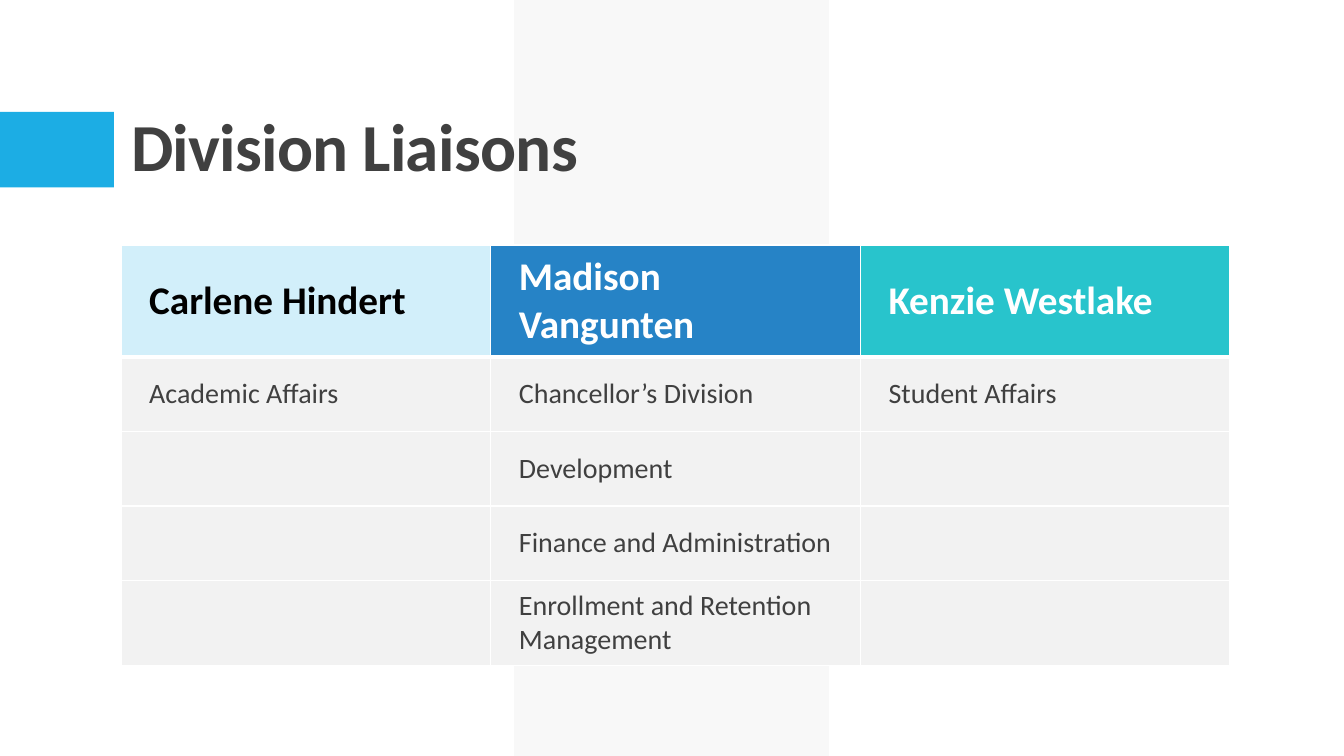
from lxml import etree
from pptx import Presentation
from pptx.dml.color import RGBColor
from pptx.enum.shapes import MSO_SHAPE
from pptx.enum.text import MSO_ANCHOR, MSO_AUTO_SIZE, PP_ALIGN
from pptx.oxml.ns import qn
from pptx.util import Inches, Pt

RECT, SLANT = MSO_SHAPE.RECTANGLE, MSO_SHAPE.PARALLELOGRAM
MIDDLE, BOTTOM = MSO_ANCHOR.MIDDLE, MSO_ANCHOR.BOTTOM
LEFT, FIXED = PP_ALIGN.LEFT, MSO_AUTO_SIZE.NONE

COLORS = {"white": "FFFFFF", "black": "000000", "gray": "F2F2F2", "text": "404040",
          "accent": "1CADE4", "pale": "D2EFFA", "blue": "2683C6", "teal": "28C4CC"}
HEADS = [("pale", "black"), ("blue", "white"), ("teal", "white")]
ROWS = [
    ["Carlene Hindert", "Madison Vangunten", "Kenzie Westlake"],
    ["Academic Affairs", "Chancellor’s Division", "Student Affairs"],
    ["", "Development", ""],
    ["", "Finance and Administration", ""],
    ["", "Enrollment and Retention Management", ""],
]


def rgb(name):
    return RGBColor.from_string(COLORS[name])


class Deck:
    """Holds the shared font and the slide being built."""

    def __init__(self, font):
        self.font = font
        self.prs = Presentation()
        self.prs.slide_width, self.prs.slide_height = Inches(13.33), Inches(7.5)
        self.slide = self.prs.slides.add_slide(self.prs.slide_layouts[5])

    def style(self, para, size, color, bold):
        for run in para.runs:
            font = run.font
            font.name, font.size, font.bold = self.font, Pt(size), bold
            font.color.rgb = rgb(color)

    def block(self, kind, box, color, alpha=100):
        shape = self.slide.shapes.add_shape(kind, *map(Inches, box))
        shape.shadow.inherit = False
        shape.fill.solid()
        shape.fill.fore_color.rgb = rgb(color)
        shape.line.fill.background()
        if alpha < 100:
            tint = shape.element.spPr.find(f"{qn('a:solidFill')}/{qn('a:srgbClr')}")
            etree.SubElement(tint, qn("a:alpha"), val=str(alpha * 1000))
        return shape

    def title(self, text, box):
        """Fill the title placeholder and bring it in front of the blocks."""
        shape = self.slide.shapes.title
        shape.left, shape.top, shape.width, shape.height = map(Inches, box)
        frame = shape.text_frame
        frame.text = text
        frame.auto_size, frame.word_wrap = FIXED, True
        frame.vertical_anchor = BOTTOM
        para = frame.paragraphs[0]
        para.alignment, para.line_spacing = LEFT, 0.9
        self.style(para, 48, "text", True)
        para.runs[0].font._element.set("spc", "-50")
        self.slide.shapes.element.append(shape.element)

    def edges(self, cell, top, bottom):
        """Draw white cell borders; top and bottom are widths in points."""
        props = cell._tc.get_or_add_tcPr()
        widths = {"a:lnL": 1, "a:lnR": 1, "a:lnT": top, "a:lnB": bottom}
        for spot, (tag, width) in enumerate(widths.items()):
            line = etree.Element(qn(tag), w=str(Pt(width)))
            fill = etree.SubElement(line, qn("a:solidFill"))
            etree.SubElement(fill, qn("a:srgbClr"), val=COLORS["white"])
            props.insert(spot, line)

    def cell(self, cell, text, fill, color, size, bold):
        cell.fill.solid()
        cell.fill.fore_color.rgb = rgb(fill)
        cell.vertical_anchor = MIDDLE
        cell.margin_left = cell.margin_right = Inches(0.28)
        cell.margin_top = cell.margin_bottom = Inches(0.08)
        cell.text = text
        self.style(cell.text_frame.paragraphs[0], size, color, bold)

    def table(self, rows, box, heights):
        table = self.slide.shapes.add_table(
            len(rows), len(rows[0]), *map(Inches, box)).table
        for r, texts in enumerate(rows):
            table.rows[r].height = Inches(heights[r])
            for c, text in enumerate(texts):
                cell = table.cell(r, c)
                if r == 0:
                    self.cell(cell, text, *HEADS[c], 28, True)
                else:
                    self.cell(cell, text, "gray", "text", 20, False)
                self.edges(cell, 3 if r == 1 else 1, 3 if r == 0 else 1)


def main():
    deck = Deck("Calibri")
    for _ in range(2):
        band = deck.block(SLANT, (5.1, 0, 3.12, 7.5), "gray", alpha=30)
        band.adjustments[0] = 0
    deck.block(RECT, (0, 1.11, 1.13, 0.75), "accent")
    deck.title("Division Liaisons", (1.2, 0.31, 11, 1.59))
    deck.table(ROWS, (1.2, 2.43, 11, 3.87), [0.91] + [0.74] * 4)
    deck.prs.save("out.pptx")


if __name__ == "__main__":
    main()
